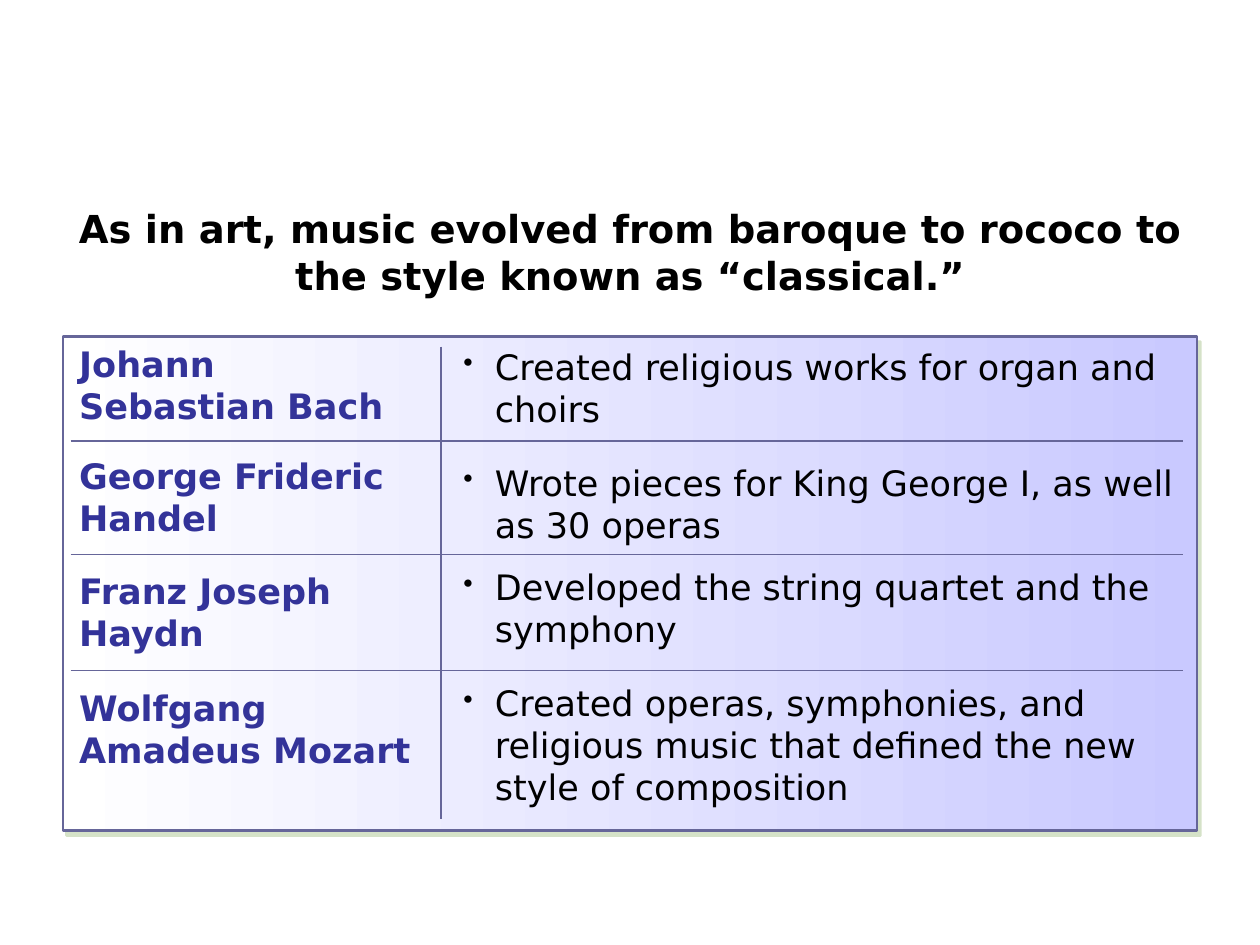
"""Build a slide on composers and the classical style."""
from dataclasses import dataclass

from lxml import etree
from pptx import Presentation
from pptx import util as u
from pptx.dml.color import RGBColor
from pptx.enum import shapes, text
from pptx.oxml import ns


@dataclass(frozen=True)
class Theme:
    """Colours, font and type sizes of the slide."""
    font: str = "DejaVu Sans"
    ink: str = "000000"
    name: str = "333399"
    rule: str = "666699"
    start: str = "FFFFFF"
    end: str = "C9C9FF"
    shadow: str = "ADC793"
    title_pt: int = 22
    body_pt: int = 20


THEME = Theme()
TITLE = "As in art, music evolved from baroque to rococo to the style known as “classical.”"
COLUMNS = (2.94, 5.89)
ROWS = (0.75, 0.9, 0.92, 1.18)
COMPOSERS = (
    ("Johann Sebastian Bach", 2.67, 2.72,
     "Created religious works for organ and choirs", 2.69, 0.77),
    ("George Frideric Handel", 3.56, 2.72,
     "Wrote pieces for King George I, as well as 30 operas", 3.61, 0.77),
    ("Franz Joseph Haydn", 4.47, 2.72,
     "Developed the string quartet and the symphony", 4.44, 0.77),
    ("Wolfgang Amadeus Mozart", 5.4, 2.97,
     "Created operas, symphonies, and religious music that defined the new style of composition",
     5.36, 1.1),
)


def add_xml(parent, tag, **attrs):
    """Append a DrawingML element to its parent."""
    return etree.SubElement(parent, ns.qn(tag), attrs)


def inches(*lengths):
    """Convert several lengths."""
    return [u.Inches(n) for n in lengths]


def write(sp, words, size=THEME.body_pt, color=THEME.ink, bold=False,
          align=text.PP_ALIGN.LEFT, after=0, bullet=False):
    """Put formatted text into a shape."""
    tf = sp.text_frame
    tf.word_wrap = True
    tf.auto_size = text.MSO_AUTO_SIZE.SHAPE_TO_FIT_TEXT
    tf.vertical_anchor = text.MSO_ANCHOR.TOP
    p = tf.paragraphs[0]
    p.alignment = align
    p.space_after = u.Pt(after)
    r = p.add_run()
    r.text = words
    r.font.name, r.font.size, r.font.bold = THEME.font, u.Pt(size), bold
    r.font.color.rgb = RGBColor.from_string(color)
    if bullet:
        pPr = p._p.get_or_add_pPr()
        pPr.set("marL", str(u.Inches(0.25)))
        pPr.set("indent", str(u.Inches(-0.25)))
        add_xml(pPr, "a:buSzPct", val="80000")
        add_xml(pPr, "a:buChar", char="•")


def add_title(s):
    """Place the heading in the title placeholder."""
    sp = s.shapes.title
    sp.left, sp.top, sp.width, sp.height = inches(0.5, 1.58, 9, 1.05)
    write(sp, TITLE, size=THEME.title_pt, bold=True,
          align=text.PP_ALIGN.CENTER, after=13)


def add_panel(s):
    """Draw the gradient panel with its hard shadow."""
    sp = s.shapes.add_shape(shapes.MSO_SHAPE.RECTANGLE, *inches(0.5, 2.67, 9, 3.92))
    sp.fill.gradient()
    sp.fill.gradient_angle = 0
    for stop, color in zip(sp.fill.gradient_stops, (THEME.start, THEME.end)):
        stop.color.rgb = RGBColor.from_string(color)
    sp.line.color.rgb = RGBColor.from_string(THEME.rule)
    sp.line.width = u.Pt(1.5)
    sp.shadow.inherit = False
    effects = sp._element.spPr.find(ns.qn("a:effectLst"))
    shadow = add_xml(effects, "a:outerShdw", blurRad="0", dist=str(u.Pt(3.6)),
                     dir=str(56 * 60000), algn="ctr", rotWithShape="0")
    color = add_xml(shadow, "a:srgbClr", val=THEME.shadow)
    add_xml(color, "a:alpha", val="50000")


def set_border(cell, side, visible):
    """Show or hide one side of a cell."""
    ln = add_xml(cell._tc.get_or_add_tcPr(), f"a:ln{side}", w=str(u.Pt(1)))
    if visible:
        add_xml(add_xml(ln, "a:solidFill"), "a:srgbClr", val=THEME.rule)
    else:
        add_xml(ln, "a:noFill")


def add_grid(s):
    """Add the clear table whose inner borders divide the panel."""
    frame = s.shapes.add_table(len(ROWS), len(COLUMNS), *inches(0.56, 2.75, 8.83, 3.75))
    table = frame.table
    table.first_row = table.horz_banding = False
    for column, width in zip(table.columns, COLUMNS):
        column.width = u.Inches(width)
    for i, height in enumerate(ROWS):
        table.rows[i].height = u.Inches(height)
        for j in range(len(COLUMNS)):
            cell = table.cell(i, j)
            set_border(cell, "L", j > 0)
            set_border(cell, "R", j < len(COLUMNS) - 1)
            set_border(cell, "T", i > 0)
            set_border(cell, "B", i < len(ROWS) - 1)
            cell.fill.background()


def add_composer(s, name, name_top, name_width, work, work_top, work_height):
    """Group a composer's name with the description of the work."""
    group = s.shapes.add_group_shape()
    label = group.shapes.add_textbox(*inches(0.53, name_top, name_width, 0.77))
    write(label, name, color=THEME.name, bold=True)
    note = group.shapes.add_textbox(*inches(3.58, work_top, 5.92, work_height))
    write(note, work, bullet=True)


def main():
    """Build and save the slide."""
    prs = Presentation()
    prs.slide_width, prs.slide_height = inches(10, 7.5)
    s = prs.slides.add_slide(prs.slide_layouts[5])
    add_title(s)
    add_panel(s)
    add_grid(s)
    for composer in COMPOSERS:
        add_composer(s, *composer)
    prs.save("out.pptx")


if __name__ == "__main__":
    main()
